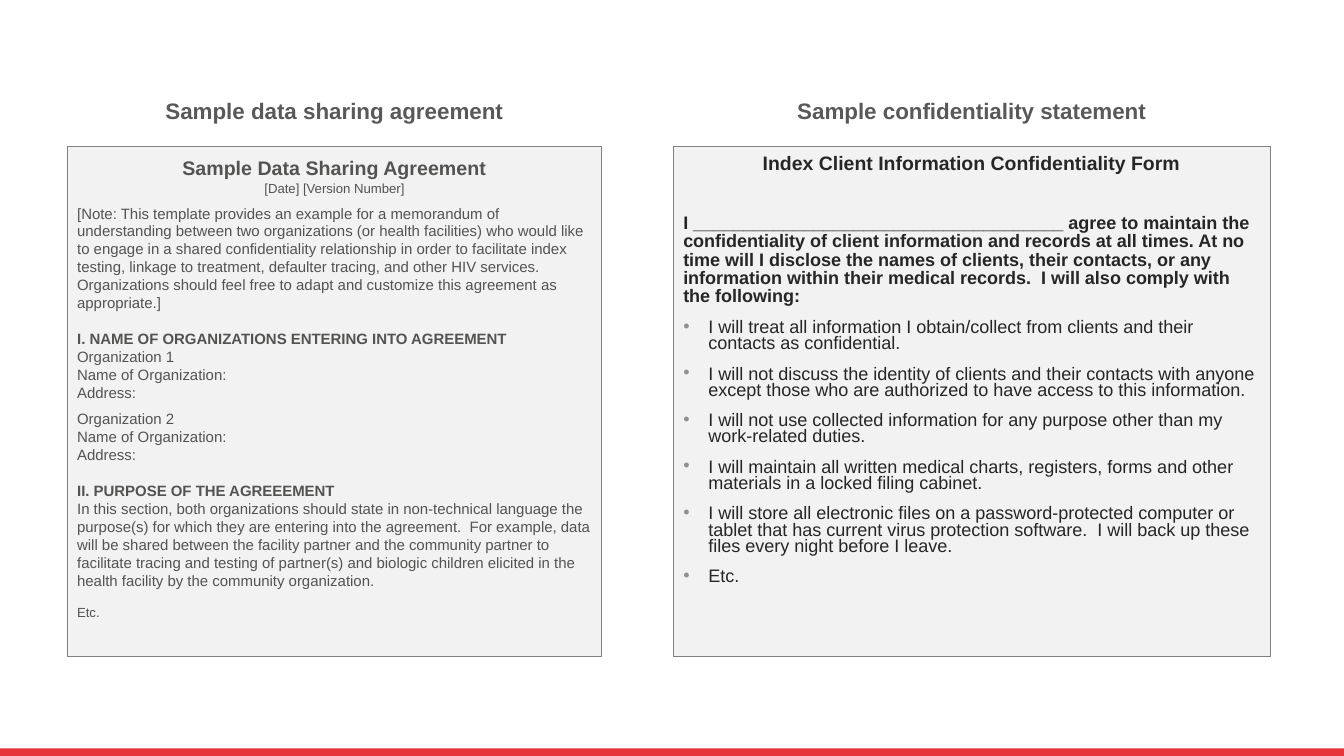
"""Build a slide showing a sample data sharing agreement beside a confidentiality form."""
from dataclasses import dataclass

from lxml import etree
from pptx import Presentation, util as u
from pptx.dml.color import RGBColor
from pptx.enum import shapes, text
from pptx.oxml.ns import qn


@dataclass(frozen=True)
class Theme:
    font: str = "Arial"
    accent: str = "E73439"
    panel: str = "F2F2F2"
    border: str = "808080"
    heading: str = "595959"
    agreement: str = "535352"
    form: str = "262626"
    bullet: str = "919194"
    heading_size: float = 16
    agreement_title: float = 14
    agreement_body: float = 10.7
    agreement_small: float = 9.4
    form_title: float = 13.9
    form_body: float = 12.9


class SlideBuilder:
    """Place styled elements on a grid of 20 columns and 20 rows."""

    def __init__(self, presentation, theme):
        self.theme = theme
        self.slide = presentation.slides.add_slide(presentation.slide_layouts[6])
        self.column = presentation.slide_width / 20
        self.row = presentation.slide_height / 20

    def place(self, left, top, width, height):
        """Turn columns and rows into lengths."""
        return (round(left * self.column), round(top * self.row),
                round(width * self.column), round(height * self.row))

    def rectangle(self, cell, fill, border=None):
        """Draw a flat rectangle."""
        shape = self.slide.shapes.add_shape(
            shapes.MSO_SHAPE.RECTANGLE, *self.place(*cell))
        shape.shadow.inherit = False
        shape.fill.solid()
        shape.fill.fore_color.rgb = RGBColor.from_string(fill)
        if border:
            shape.line.color.rgb = RGBColor.from_string(border)
            shape.line.width = u.Pt(0.75)
        else:
            shape.line.fill.background()
        return shape

    def heading(self, cell, words):
        """Write a centred heading above a panel."""
        frame = self.slide.shapes.add_textbox(*self.place(*cell)).text_frame
        frame.word_wrap = True
        frame.vertical_anchor = text.MSO_ANCHOR.MIDDLE
        self.paragraph(frame.paragraphs[0], words, self.theme.heading_size,
                       self.theme.heading, bold=True, centred=True, spacing=0.9)

    def panel(self, cell, color, entries):
        """Draw a bordered panel and fill it with paragraphs."""
        shape = self.rectangle(cell, self.theme.panel, self.theme.border)
        frame = shape.text_frame
        frame.word_wrap = True
        frame.vertical_anchor = text.MSO_ANCHOR.TOP
        frame.margin_left = frame.margin_right = u.Inches(0.1)
        frame.margin_top = frame.margin_bottom = u.Inches(0.1)
        for index, (words, size, options) in enumerate(entries):
            paragraph = frame.add_paragraph() if index else frame.paragraphs[0]
            self.paragraph(paragraph, words, size, color, **options)

    def paragraph(self, paragraph, words, size, color, bold=False, centred=False,
                  spacing=1.0, before=0, bullet=False):
        """Write and style one paragraph."""
        paragraph.text = words
        paragraph.alignment = text.PP_ALIGN.CENTER if centred else text.PP_ALIGN.LEFT
        paragraph.line_spacing = spacing
        if before:
            paragraph.space_before = u.Pt(before)
        if bullet:
            self.bullet(paragraph)
        font = paragraph.font
        font.name, font.size, font.bold = self.theme.font, u.Pt(size), bold
        font.color.rgb = RGBColor.from_string(color)

    def bullet(self, paragraph):
        """Give a paragraph a hanging bullet."""
        properties = paragraph._p.get_or_add_pPr()
        properties.set("marL", str(u.Inches(0.25)))
        properties.set("indent", str(-u.Inches(0.25)))
        bullet_color = etree.SubElement(properties, qn("a:buClr"))
        etree.SubElement(bullet_color, qn("a:srgbClr"), val=self.theme.bullet)
        etree.SubElement(properties, qn("a:buFont"), typeface=self.theme.font)
        etree.SubElement(properties, qn("a:buChar"), char="•")


def agreement_entries(theme):
    """List the paragraphs of the data sharing agreement."""
    body, small = theme.agreement_body, theme.agreement_small
    section = dict(bold=True, before=12.8)
    return [
        ("Sample Data Sharing Agreement", theme.agreement_title,
         dict(bold=True, centred=True)),
        ("[Date] [Version Number]", small, dict(centred=True)),
        ("[Note: This template provides an example for a memorandum of understanding "
         "between two organizations (or health facilities) who would like to engage in "
         "a shared confidentiality relationship in order to facilitate index testing, "
         "linkage to treatment, defaulter tracing, and other HIV services.  "
         "Organizations should feel free to adapt and customize this agreement as "
         "appropriate.]", body, dict(before=6)),
        ("I. NAME OF ORGANIZATIONS ENTERING INTO AGREEMENT", body, section),
        *[(words, body, dict(before=before))
          for number, gap in ((1, 0), (2, 6))
          for words, before in ((f"Organization {number}", gap),
                                ("Name of Organization:", 0), ("Address:", 0))],
        ("II. PURPOSE OF THE AGREEEMENT", body, section),
        ("In this section, both organizations should state in non-technical language "
         "the purpose(s) for which they are entering into the agreement.  For example, "
         "data will be shared between the facility partner and the community partner to "
         "facilitate tracing and testing of partner(s) and biologic children elicited "
         "in the health facility by the community organization.", body, {}),
        ("Etc.", small, dict(before=11)),
    ]


def form_entries(theme):
    """List the paragraphs of the confidentiality form."""
    promises = [
        "I will treat all information I obtain/collect from clients and their contacts "
        "as confidential.",
        "I will not discuss the identity of clients and their contacts with anyone "
        "except those who are authorized to have access to this information.",
        "I will not use collected information for any purpose other than my "
        "work-related duties.",
        "I will maintain all written medical charts, registers, forms and other "
        "materials in a locked filing cabinet.",
        "I will store all electronic files on a password-protected computer or tablet "
        "that has current virus protection software.  I will back up these files every "
        "night before I leave.",
        "Etc.",
    ]
    return [
        ("Index Client Information Confidentiality Form", theme.form_title,
         dict(bold=True, centred=True, spacing=0.75)),
        ("I _____________________________________ agree to maintain the "
         "confidentiality of client information and records at all times. At no time "
         "will I disclose the names of clients, their contacts, or any information "
         "within their medical records.  I will also comply with the following:",
         theme.form_body, dict(bold=True, spacing=0.85, before=29)),
        *[(promise, theme.form_body, dict(spacing=0.75, before=10, bullet=True))
          for promise in promises],
    ]


def main():
    """Build and save the slide."""
    presentation = Presentation()
    presentation.slide_width = u.Inches(13.33)
    presentation.slide_height = u.Inches(7.5)
    theme = Theme()
    builder = SlideBuilder(presentation, theme)
    builder.rectangle((0, 19.8, 20, 0.2), theme.accent)
    columns = (
        (1, 7.95, "Sample data sharing agreement", theme.agreement,
         agreement_entries(theme)),
        (10.02, 8.88, "Sample confidentiality statement", theme.form,
         form_entries(theme)),
    )
    for left, width, title, color, entries in columns:
        builder.heading((left, 2.05, width, 1.84), title)
        builder.panel((left, 3.87, width, 13.5), color, entries)
    presentation.save("out.pptx")


if __name__ == "__main__":
    main()
